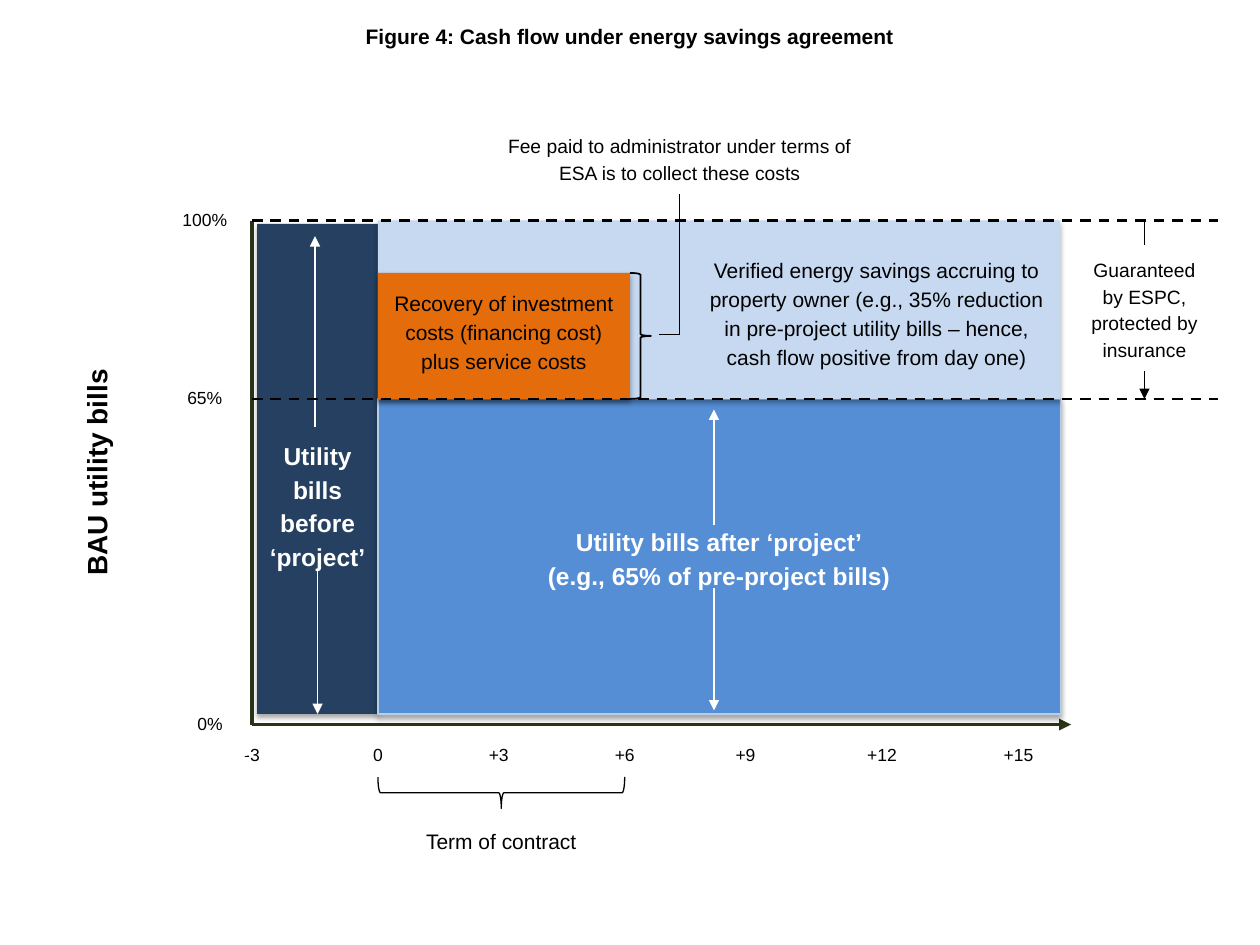
import lxml.etree
import pptx
import pptx.dml.color
import pptx.enum.dml
import pptx.enum.shapes
import pptx.enum.text
import pptx.oxml.ns
import pptx.util

Pt = pptx.util.Pt
qn = pptx.oxml.ns.qn
KIND = pptx.enum.shapes.MSO_SHAPE
ANCHOR = pptx.enum.text.MSO_ANCHOR
DASH = pptx.enum.dml.MSO_LINE.DASH
BLACK, WHITE = "000000", "FFFFFF"


def rgb(code):
    return pptx.dml.color.RGBColor.from_string(code)


def apply(target, values):
    for name, value in values.items():
        setattr(target, name, value)


def node(parent, tag, **values):
    return lxml.etree.SubElement(parent, qn(tag), values)


def write(shape, text, size=12, color=BLACK, bold=False, anchor=ANCHOR.MIDDLE,
          pad=(7.2, 3.6, 7.2, 3.6), gap=1.15):
    """Fill a shape with centred lines; pad is left, top, right, bottom."""
    frame = shape.text_frame
    frame.text = text
    sides = ("margin_left", "margin_top", "margin_right", "margin_bottom")
    apply(frame, {"word_wrap": True, "vertical_anchor": anchor})
    apply(frame, {side: Pt(value) for side, value in zip(sides, pad)})
    for para in frame.paragraphs:
        apply(para, {"alignment": pptx.enum.text.PP_ALIGN.CENTER,
                     "line_spacing": gap})
        for run in para.runs:
            apply(run.font, {"name": "Arial", "size": Pt(size), "bold": bold})
            run.font.color.rgb = rgb(color)


def block(slide, box, fill=None, edge=None, width=0.75, kind=KIND.RECTANGLE):
    shape = slide.shapes.add_shape(kind, *map(Pt, box))
    shape.shadow.inherit = False
    if fill:
        shape.fill.solid()
        shape.fill.fore_color.rgb = rgb(fill)
    else:
        shape.fill.background()
    if edge:
        shape.line.color.rgb = rgb(edge)
        shape.line.width = Pt(width)
    else:
        shape.line.fill.background()
    return shape


def shade(shape):
    """Give a shape a soft shadow straight below it."""
    effect = shape._element.spPr.find(qn("a:effectLst"))
    outer = node(effect, "a:outerShdw", blurRad=str(Pt(3.1)),
                 dist=str(Pt(1.8)), dir="5400000", rotWithShape="0")
    color = node(outer, "a:srgbClr", val=BLACK)
    node(color, "a:alpha", val="35000")


def label(slide, box, text, **style):
    shape = block(slide, box, WHITE)
    write(shape, text, **style)
    return shape


def line(slide, x1, y1, x2, y2, color=BLACK, width=0.75, arrow=False, dash=None):
    link = slide.shapes.add_connector(
        pptx.enum.shapes.MSO_CONNECTOR.STRAIGHT, *map(Pt, (x1, y1, x2, y2)))
    link.line.color.rgb = rgb(color)
    apply(link.line, {"width": Pt(width), "dash_style": dash})
    if arrow:
        node(link.line._get_or_add_ln(), "a:tailEnd", type="triangle")
    node(link._element.spPr, "a:effectLst")
    return link


def title(slide, box):
    shape = slide.shapes.title
    apply(shape, dict(zip(("left", "top", "width", "height"), map(Pt, box))))
    write(shape, "Figure 4: Cash flow under energy savings agreement",
          bold=True, gap=1)


def axes(slide, box):
    left, top, wide, high = box
    base = top + high
    # Rotated name of the value axis
    name = label(slide, (left - 220.5, top + 124.5, 270, 39),
                 "BAU utility bills", size=16, bold=True, anchor=ANCHOR.TOP)
    name.rotation = 270
    # Axis lines
    line(slide, left, top, left, base, "293315", 2.25)
    line(slide, left, base, left + wide, base, "293315", 2.25, arrow=True)
    # Tick labels
    tick = {"size": 10, "anchor": ANCHOR.TOP, "pad": (2, 3.6, 2, 3.6)}
    years = {"-3": 0, "0": 72, "+3": 141, "+6": 213,
             "+9": 282, "+12": 360, "+15": 438}
    for text, x in years.items():
        label(slide, (left + x - 15, base + 6, 30, 30), text, **tick)
    for text, x, y in (("100%", 27, 0), ("65%", 27, 102), ("0%", 24, high)):
        label(slide, (left - x - 21, top + y - 12, 42, 30), text, **tick)


def bars(slide, box):
    left, top, wide, high = box
    start, split = left + 69, top + 102
    rest, base = wide - 69, top + high
    # Bills before, bills after, savings and cost recovery
    areas = (
        ((left, top + 2, 69, high - 2), "254061", None,
         "Utility bills before ‘project’",
         {"size": 14, "color": WHITE, "bold": True, "pad": (5, 40, 5, 0)}),
        ((start, split, rest, base - split), "558ED5", "B9CDE5",
         "Utility bills after ‘project’\n(e.g., 65% of pre-project bills)",
         {"size": 14, "color": WHITE, "bold": True}),
        ((start, top, rest, 102), "C6D9F1", None,
         "Verified energy savings accruing to property owner (e.g., 35% "
         "reduction in pre-project utility bills – hence, cash flow positive "
         "from day one)", {"pad": (187, 4, 7, 2)}),
        ((start, top + 30, 144, 72), "E46C0A", None,
         "Recovery of investment costs (financing cost) plus service costs",
         {"pad": (5, 0, 5, 6)}),
    )
    for place, fill, edge, text, style in areas:
        shape = block(slide, place, fill, edge)
        shade(shape)
        write(shape, text, **style)
    # Arrows spanning the bills before and after
    for x, y1, y2 in ((34.5, 200, high), (33, 118, 9),
                      (261, 210, high - 2), (261, 174, 108)):
        line(slide, left + x, top + y1, left + x, top + y2, WHITE, arrow=True)


def term(slide, box):
    left, top, wide, high = box
    brace = block(slide, (left + wide / 2 - 9, top + 9 - wide / 2, 18, wide),
                  edge=BLACK, kind=KIND.LEFT_BRACE)
    brace.rotation = 270
    label(slide, (left, top + high - 24, wide, 24), "Term of contract",
          anchor=ANCHOR.TOP)


def cover(slide, box):
    left, top, wide, high = box
    mid = left + wide / 2
    note = label(slide, (left, top + 14, wide, 72),
                 "Guaranteed by ESPC, protected by insurance", size=11)
    upper = line(slide, mid, top, mid, top + 14)
    upper.end_connect(note, 0)
    lower = line(slide, mid, top + 86, mid, top + high, arrow=True)
    lower.begin_connect(note, 2)


def fee(slide, box):
    left, top, wide, high = box
    mid, base = left + wide / 2, top + high
    note = label(slide, (left, top, wide, 42),
                 "Fee paid to administrator under terms of ESA is to collect "
                 "these costs", size=11)
    # Brace beside the recovered costs, led up to the note
    block(slide, (left + 85, base - 72, 12, 72), edge=BLACK, width=1,
          kind=KIND.RIGHT_BRACE)
    drop = line(slide, mid, top + 42, mid, base - 37)
    drop.begin_connect(note, 2)
    line(slide, mid - 12, base - 37, mid, base - 37)


def levels(slide, box):
    left, top, wide, high = box
    for y in (top + high, top):
        line(slide, left, y, left + wide, y, width=1.5, dash=DASH)


def main():
    deck = pptx.Presentation()
    apply(deck, {"slide_width": Pt(720), "slide_height": Pt(540)})
    slide = deck.slides.add_slide(deck.slide_layouts[5])
    title(slide, (0, 6.6, 720, 28))
    axes(slide, (144, 126, 468, 288))
    bars(slide, (147, 126, 459, 282))
    term(slide, (216, 444, 141, 48))
    cover(slide, (612, 126, 84, 102))
    fee(slide, (275, 69, 227, 159))
    levels(slide, (144, 126, 552, 102))
    deck.save("out.pptx")


if __name__ == "__main__":
    main()
